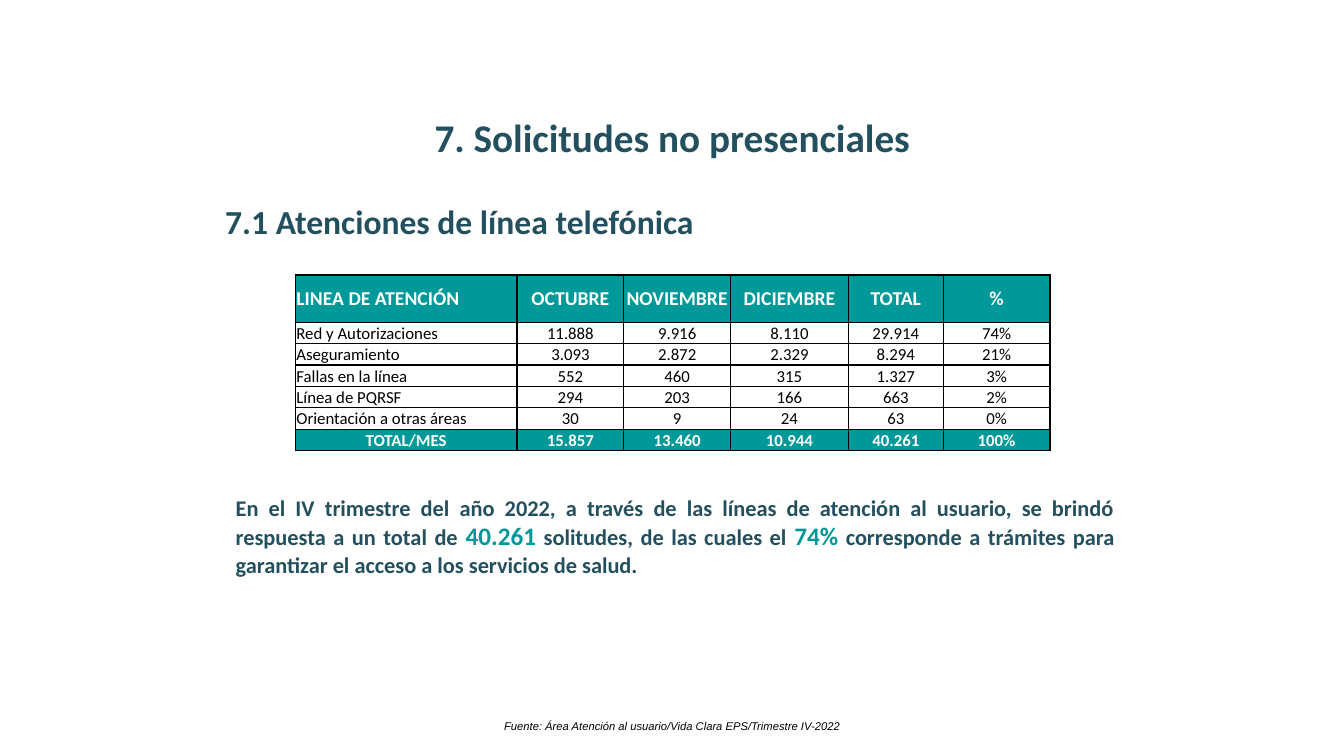
from dataclasses import dataclass

from lxml.etree import SubElement
from pptx import Presentation
from pptx.dml.color import RGBColor
from pptx.enum.text import MSO_ANCHOR, PP_ALIGN
from pptx.oxml.ns import qn
from pptx.util import Cm, Pt

NAVY = RGBColor(0x23, 0x50, 0x5E)
TEAL = RGBColor(0x00, 0x99, 0x99)
WHITE = RGBColor(0xFF, 0xFF, 0xFF)
BLACK = RGBColor(0x00, 0x00, 0x00)


@dataclass
class Span:
    text: str
    size: int
    color: RGBColor = NAVY


@dataclass
class Label:
    left: float
    top: float
    width: float
    height: float
    spans: list[Span]
    align: PP_ALIGN = PP_ALIGN.CENTER
    face: str = "Calibri"
    bold: bool = True
    italic: bool = False


LABELS = [
    Label(5.23, 2.72, 23.42, 1.45, [Span("7. Solicitudes no presenciales", 28)]),
    Label(4.01, 4.93, 15.14, 1.27, [Span("7.1 Atenciones de línea telefónica", 24)]),
    Label(5.69, 12.32, 22.65, 2.39, [
        Span("En el IV trimestre del año 2022, a través de las líneas de atención "
             "al usuario, se brindó respuesta a un total de ", 16),
        Span("40.261", 18, TEAL),
        Span(" solitudes, de las cuales el ", 16),
        Span("74%", 18, TEAL),
        Span(" corresponde a trámites para garantizar el acceso a los servicios "
             "de salud.", 16),
    ], align=PP_ALIGN.JUSTIFY),
    Label(8.69, 18.01, 16.51, 0.61, [
        Span("Fuente: Área Atención al usuario/Vida Clara EPS/Trimestre IV-2022",
             8, BLACK),
    ], face="Arial", bold=False, italic=True),
]

WIDTHS = [5.59, 2.69, 2.69, 2.97, 2.39, 2.69]
HEAD_H, ROW_H = 1.19, 0.53
ROWS = [
    ["LINEA DE ATENCIÓN", "OCTUBRE", "NOVIEMBRE", "DICIEMBRE", "TOTAL", "%"],
    ["Red y Autorizaciones", "11.888", "9.916", "8.110", "29.914", "74%"],
    ["Aseguramiento", "3.093", "2.872", "2.329", "8.294", "21%"],
    ["Fallas en la línea", "552", "460", "315", "1.327", "3%"],
    ["Línea de PQRSF", "294", "203", "166", "663", "2%"],
    ["Orientación a otras áreas", "30", "9", "24", "63", "0%"],
    ["TOTAL/MES", "15.857", "13.460", "10.944", "40.261", "100%"],
]


def add_label(slide, label: Label) -> None:
    box = slide.shapes.add_textbox(Cm(label.left), Cm(label.top),
                                   Cm(label.width), Cm(label.height))
    frame = box.text_frame
    frame.word_wrap = True
    para = frame.paragraphs[0]
    para.alignment = label.align
    para.font.name = label.face
    para.font.bold = label.bold
    para.font.italic = label.italic
    for span in label.spans:
        run = para.add_run()
        run.text = span.text
        run.font.size = Pt(span.size)
        run.font.color.rgb = span.color


def add_edges(cell) -> None:
    """Draw a thin black line on all four sides, ahead of the cell fill."""
    props = cell._tc.get_or_add_tcPr()
    for spot, side in enumerate(("lnL", "lnR", "lnT", "lnB")):
        line = SubElement(props, qn(f"a:{side}"), w=str(Pt(1)))
        fill = SubElement(line, qn("a:solidFill"))
        SubElement(fill, qn("a:srgbClr"), val=str(BLACK))
        props.insert(spot, line)


def fill_cell(cell, text: str, row: int, col: int) -> None:
    head, total = row == 0, row == len(ROWS) - 1
    strong = head or total
    cell.margin_left = cell.margin_right = cell.margin_top = Cm(0.03)
    cell.margin_bottom = 0
    low = col == 0 and not head
    cell.vertical_anchor = MSO_ANCHOR.BOTTOM if low else MSO_ANCHOR.MIDDLE
    cell.fill.solid()
    cell.fill.fore_color.rgb = TEAL if strong else WHITE
    add_edges(cell)
    cell.text = text
    para = cell.text_frame.paragraphs[0]
    para.alignment = PP_ALIGN.CENTER if col or total else PP_ALIGN.LEFT
    para.font.name = "Calibri"
    para.font.size = Pt(14 if head else 12)
    para.font.bold = strong
    para.font.color.rgb = WHITE if strong else BLACK


def add_calls(slide) -> None:
    tall = HEAD_H + ROW_H * (len(ROWS) - 1)
    table = slide.shapes.add_table(len(ROWS), len(WIDTHS), Cm(7.44), Cm(6.93),
                                   Cm(sum(WIDTHS)), Cm(tall)).table
    table.first_row = table.horz_banding = False
    for column, width in zip(table.columns, WIDTHS):
        column.width = Cm(width)
    for row, texts in enumerate(ROWS):
        table.rows[row].height = Cm(ROW_H if row else HEAD_H)
        for col, text in enumerate(texts):
            fill_cell(table.cell(row, col), text, row, col)


def main() -> None:
    deck = Presentation()
    deck.slide_width, deck.slide_height = Cm(33.87), Cm(19.05)
    slide = deck.slides.add_slide(deck.slide_layouts[6])

    # Headings, summary and source line
    for label in LABELS:
        add_label(slide, label)

    # Calls by line and month
    add_calls(slide)

    deck.save("out.pptx")


if __name__ == "__main__":
    main()
